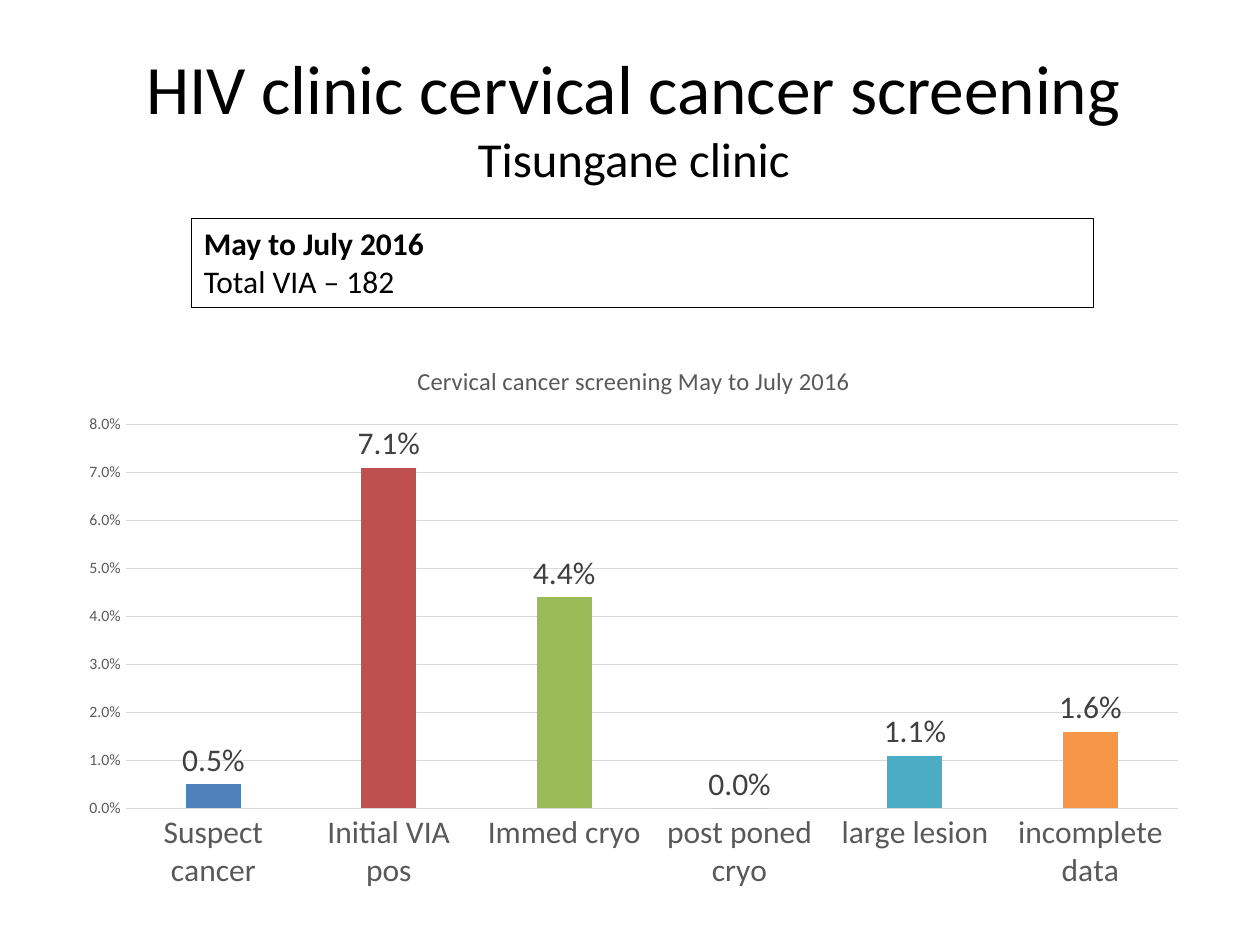
from pptx import Presentation
from pptx.chart.data import CategoryChartData
from pptx.dml.color import RGBColor
from pptx.enum.chart import XL_CHART_TYPE as ChartType, XL_LABEL_POSITION as LabelPosition, XL_TICK_MARK as TickMark
from pptx.enum.shapes import MSO_SHAPE as Shape
from pptx.enum.text import MSO_ANCHOR as Anchor, PP_ALIGN as Align
from pptx.util import Inches, Pt

FONT = "Calibri"
TITLE = [("HIV clinic cervical cancer screening", 39.6), ("Tisungane clinic", 27.9)]
SUMMARY = [("May to July 2016", True), ("Total VIA – 182", False)]
CHART_TITLE = "Cervical cancer screening May to July 2016"
RESULTS = [
    ("Suspect cancer", 0.005, "4F81BD"),
    ("Initial VIA pos", 0.071, "C0504D"),
    ("Immed cryo", 0.044, "9BBB59"),
    ("post poned cryo", 0, "8064A2"),
    ("large lesion", 0.011, "4BACC6"),
    ("incomplete data", 0.016, "F79646"),
]
PERCENT = "0.0%"
GRID, GREY, DARK, BLACK = "D9D9D9", "595959", "404040", "000000"


def color(value):
    return RGBColor.from_string(value)


def set_font(font, size, value, bold=False):
    font.name, font.size, font.bold = FONT, Pt(size), bold
    font.color.rgb = color(value)


def set_line(line, value, width):
    line.color.rgb = color(value)
    line.width = Pt(width)


def area(left, top, width, height):
    return [Inches(length) for length in (left, top, width, height)]


def add_title(page):
    frame = page.shapes.add_textbox(*area(0.53, 0.3, 9, 1.25)).text_frame
    frame.word_wrap = True
    frame.vertical_anchor = Anchor.MIDDLE
    for index, (text, size) in enumerate(TITLE):
        para = frame.paragraphs[0] if index == 0 else frame.add_paragraph()
        para.text = text
        para.alignment = Align.CENTER
        set_font(para.font, size, BLACK)


def add_summary(page):
    box = page.shapes.add_shape(Shape.RECTANGLE, *area(1.52, 1.73, 7.16, 0.71))
    box.shadow.inherit = False
    box.fill.background()
    set_line(box.line, BLACK, 0.25)
    frame = box.text_frame
    frame.word_wrap = True
    frame.vertical_anchor = Anchor.TOP
    for index, (text, bold) in enumerate(SUMMARY):
        para = frame.paragraphs[0] if index == 0 else frame.add_paragraph()
        para.text = text
        para.alignment = Align.LEFT
        set_font(para.font, 18, BLACK, bold)


def add_results(page):
    data = CategoryChartData(number_format=PERCENT)
    data.categories = [name for name, _, _ in RESULTS]
    data.add_series("Series 1", [share for _, share, _ in RESULTS])
    chart = page.shapes.add_chart(
        ChartType.COLUMN_CLUSTERED, *area(0.53, 2.71, 9, 4.44), data).chart
    set_font(chart.font, 10, BLACK)
    chart.has_legend = False
    chart.has_title = True
    heading = chart.chart_title.text_frame.paragraphs[0]
    heading.text = CHART_TITLE
    set_font(heading.font, 14, GREY)
    chart.chart_title.include_in_layout = False

    names, shares = chart.category_axis, chart.value_axis
    for axis, size in ((names, 18), (shares, 9)):
        axis.major_tick_mark = axis.minor_tick_mark = TickMark.NONE
        set_font(axis.tick_labels.font, size, GREY)
    set_line(names.format.line, GRID, 0.75)
    shares.format.line.fill.background()
    set_line(shares.major_gridlines.format.line, GRID, 0.75)
    shares.minimum_scale, shares.maximum_scale, shares.major_unit = 0, 0.08, 0.01
    shares.tick_labels.number_format = PERCENT
    shares.tick_labels.number_format_is_linked = False

    plot = chart.plots[0]
    plot.gap_width, plot.overlap = 219, -27
    plot.vary_by_categories = False
    series = plot.series[0]
    for index, (_, _, value) in enumerate(RESULTS):
        fill = series.points[index].format.fill
        fill.solid()
        fill.fore_color.rgb = color(value)
    labels = series.data_labels
    labels.show_value = True
    labels.position = LabelPosition.OUTSIDE_END
    labels.number_format = PERCENT
    labels.number_format_is_linked = False
    set_font(labels.font, 18, DARK)


def main():
    deck = Presentation()
    deck.slide_width, deck.slide_height = Inches(10), Inches(7.5)
    page = deck.slides.add_slide(deck.slide_layouts[6])
    add_title(page)
    add_summary(page)
    add_results(page)
    deck.save("out.pptx")


if __name__ == "__main__":
    main()
